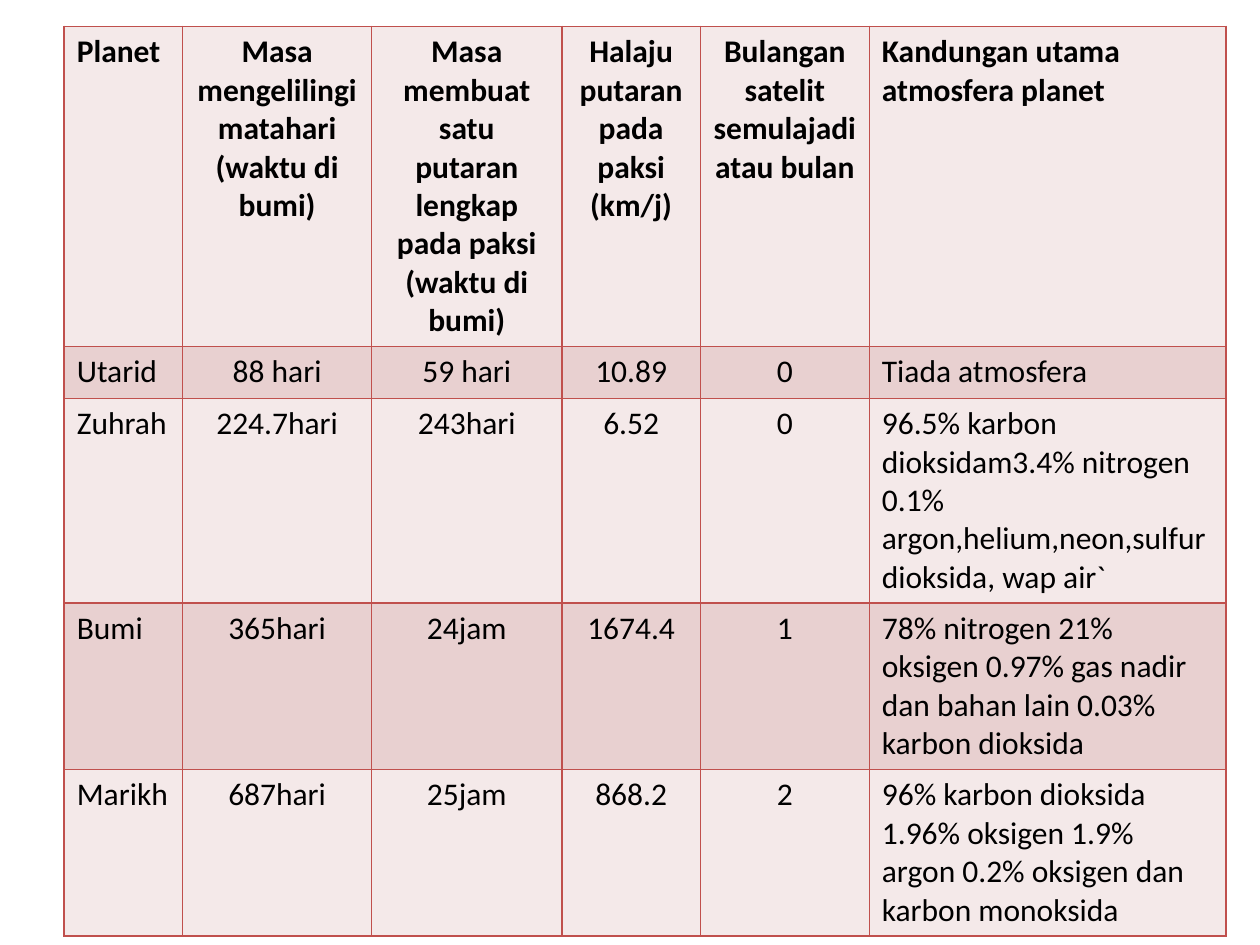
from lxml.etree import SubElement
from pptx import Presentation
from pptx.dml.color import RGBColor
from pptx.enum.text import PP_ALIGN
from pptx.oxml.ns import qn
from pptx.util import Inches, Pt

BLACK = RGBColor(0x00, 0x00, 0x00)
LIGHT = RGBColor(0xF4, 0xE9, 0xE9)
DARK = RGBColor(0xE8, 0xD0, 0xD0)
BORDER = RGBColor(0xC0, 0x50, 0x4D)

COL_WIDTHS = [0.94, 1.5, 1.51, 1.1, 1.34, 2.83]
ROW_HEIGHTS = [2.54, 0.41, 1.62, 1.32, 1.32]
PLANETS = [
    ["Planet", "Masa mengelilingi matahari (waktu di bumi)",
     "Masa membuat satu putaran lengkap pada paksi (waktu di bumi)",
     "Halaju putaran pada paksi (km/j)",
     "Bulangan satelit semulajadi atau bulan",
     "Kandungan utama atmosfera planet"],
    ["Utarid", "88 hari", "59 hari", "10.89", "0", "Tiada atmosfera"],
    ["Zuhrah", "224.7hari", "243hari", "6.52", "0",
     "96.5% karbon dioksidam3.4% nitrogen 0.1% "
     "argon,helium,neon,sulfur dioksida, wap air`"],
    ["Bumi", "365hari", "24jam", "1674.4", "1",
     "78% nitrogen 21% oksigen 0.97% gas nadir dan bahan lain "
     "0.03% karbon dioksida"],
    ["Marikh", "687hari", "25jam", "868.2", "2",
     "96% karbon dioksida 1.96% oksigen 1.9% argon 0.2% oksigen "
     "dan karbon monoksida"],
]


def add_borders(cell):
    tc_pr = cell._tc.get_or_add_tcPr()
    for side in ("a:lnL", "a:lnR", "a:lnT", "a:lnB"):
        ln = SubElement(tc_pr, qn(side), w=str(Pt(1)))
        fill = SubElement(ln, qn("a:solidFill"))
        SubElement(fill, qn("a:srgbClr"), val=str(BORDER))


prs = Presentation()
prs.slide_width = Inches(10)
prs.slide_height = Inches(7.5)
s = prs.slides.add_slide(prs.slide_layouts[6])

table = s.shapes.add_table(
    len(PLANETS), len(COL_WIDTHS), Inches(0.51), Inches(0.21),
    Inches(sum(COL_WIDTHS)), Inches(sum(ROW_HEIGHTS))).table
for column, width in zip(table.columns, COL_WIDTHS):
    column.width = Inches(width)
for row, height in zip(table.rows, ROW_HEIGHTS):
    row.height = Inches(height)

for i, values in enumerate(PLANETS):
    for j, value in enumerate(values):
        cell = table.cell(i, j)
        add_borders(cell)
        cell.fill.solid()
        cell.fill.fore_color.rgb = DARK if i % 2 else LIGHT
        cell.text = value
        p = cell.text_frame.paragraphs[0]
        p.alignment = PP_ALIGN.CENTER if 0 < j < 5 else PP_ALIGN.LEFT
        p.font.name = "Calibri"
        p.font.size = Pt(18)
        p.font.bold = i == 0
        p.font.color.rgb = BLACK

prs.save("out.pptx")
